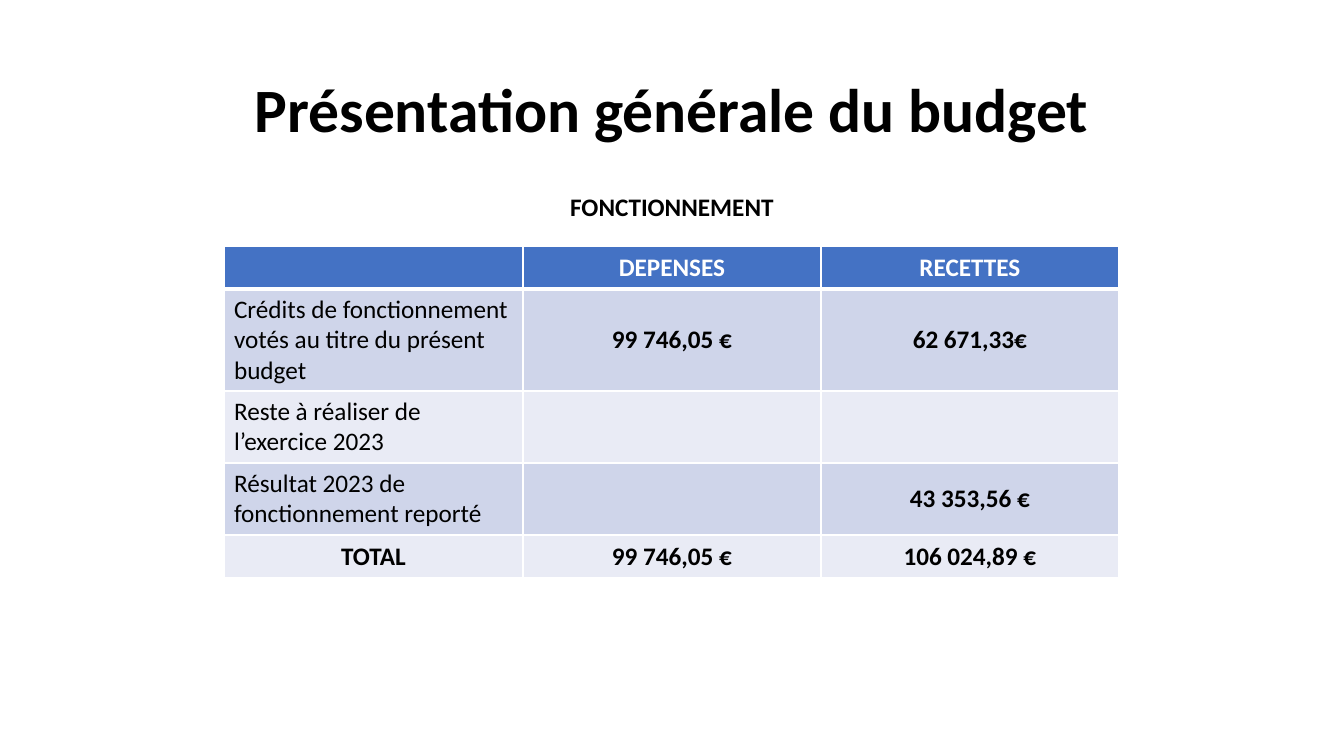
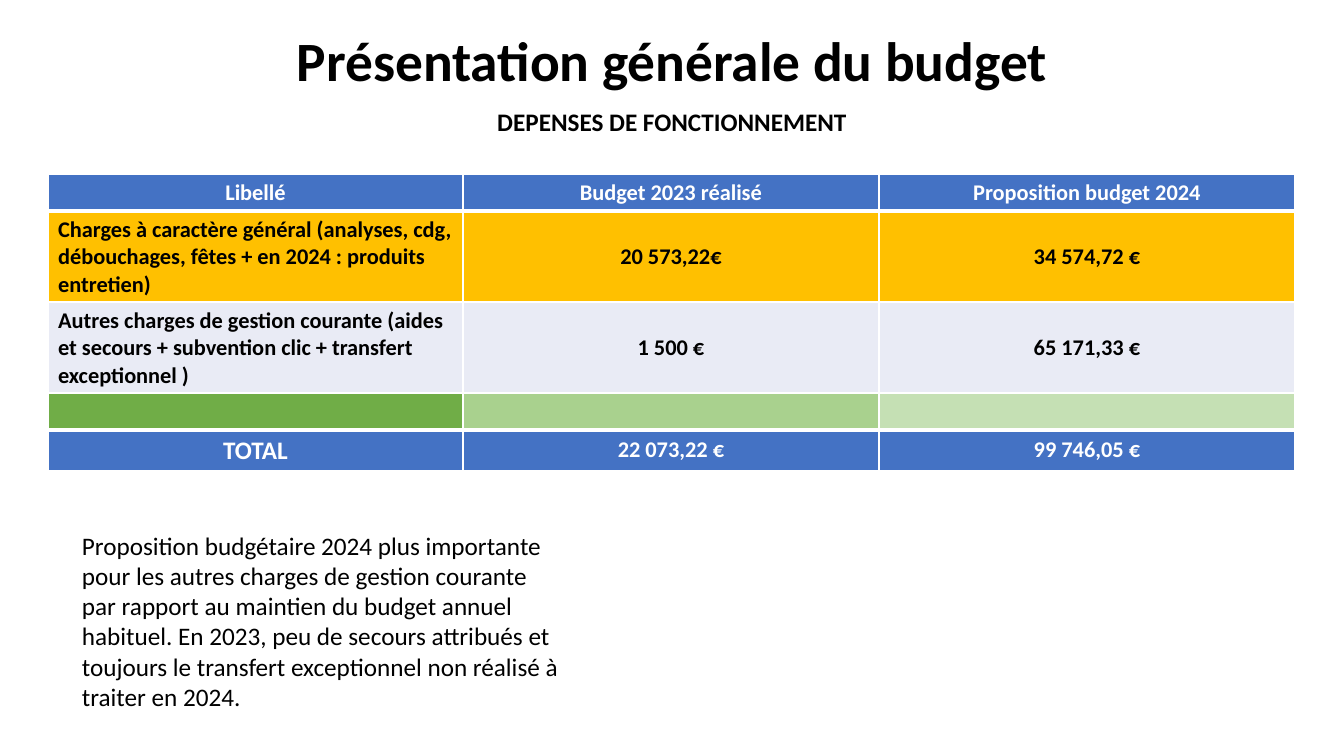
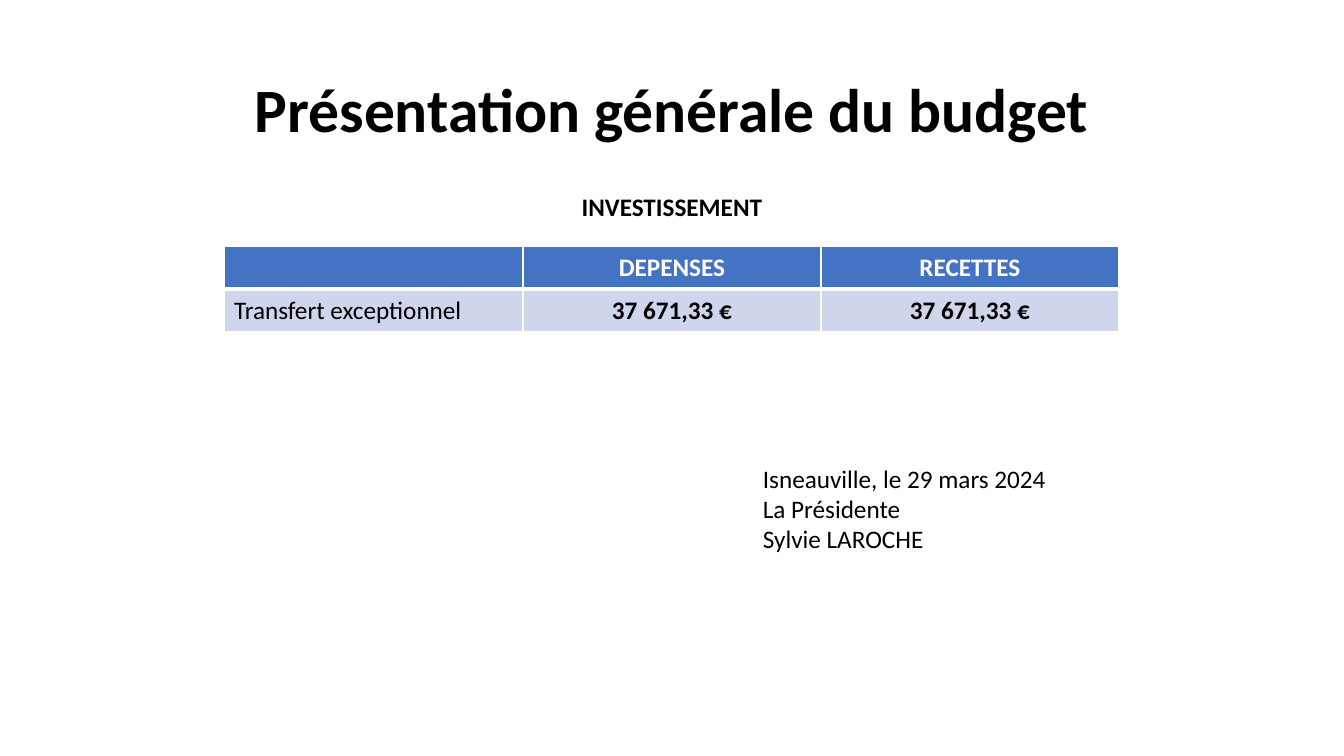
from lxml.etree import SubElement
from pptx import Presentation
from pptx.dml.color import RGBColor
from pptx.enum.text import MSO_ANCHOR as ANCHOR, MSO_AUTO_SIZE as AUTO, PP_ALIGN as ALIGN
from pptx.oxml.ns import qn
from pptx.util import Pt

PX = 914400 / 100.8
FONT = "Calibri"
TITLE = "Présentation générale du budget"
COLOURS = {
    "black": "000000", "white": "FFFFFF", "blue": "4472C4",
    "band": "CFD5EA", "pale": "E9EBF5", "gold": "FFC000",
    "green": "70AD47", "mid_green": "A9D18E", "light_green": "C5E0B4",
}


def write(paragraph, text, size=18, bold=False, colour="black", align=ALIGN.LEFT):
    paragraph.alignment = align
    run = paragraph.add_run()
    run.text = text
    run.font.name = FONT
    run.font.size = Pt(size)
    run.font.bold = bold
    run.font.color.rgb = RGBColor.from_string(COLOURS[colour])


def add_text(slide, box, lines, **style):
    frame = slide.shapes.add_textbox(*[round(n * PX) for n in box]).text_frame
    frame.word_wrap = True
    for i, line in enumerate(lines):
        write(frame.paragraphs[0] if i == 0 else frame.add_paragraph(), line, **style)


# Content: each table row is (height, fill or fills, cell texts)
SUMMARY = {
    "title_box": (92, 40, 1160, 146), "title_size": 44,
    "heading_box": (224, 186, 896, 40),
    "corner": (224, 246), "columns": (299, 298, 298),
    "size": 18, "bold_labels": False,
}
COLUMN_HEADS = (43, "blue", ("", "DEPENSES", "RECETTES"))

SLIDES = [
    SUMMARY | {
        "heading": "FONCTIONNEMENT",
        "rows": [
            COLUMN_HEADS,
            (102, "band", ("Crédits de fonctionnement votés au titre du présent budget",
                           "99 746,05 €", "62 671,33€")),
            (72, "pale", ("Reste à réaliser de l’exercice 2023", "", "")),
            (72, "band", ("Résultat 2023 de fonctionnement reporté", "", "43 353,56 €")),
            (43, "pale", ("TOTAL", "99 746,05 €", "106 024,89 €")),
        ],
    },
    {
        "title_box": (92, 40, 1160, 48), "title_size": 39.6,
        "heading_box": (297, 101, 750, 40), "heading": "DEPENSES DE FONCTIONNEMENT",
        "corner": (48, 174), "columns": (415, 416, 416),
        "size": 16, "bold_labels": True,
        "rows": [
            (37, "blue", ("Libellé", "Budget 2023 réalisé", "Proposition budget 2024")),
            (91, "gold", ("Charges à caractère général (analyses, cdg, débouchages, "
                          "fêtes + en 2024 : produits entretien)",
                          "20 573,22€", "34 574,72 €")),
            (91, "pale", ("Autres charges de gestion courante (aides et secours + "
                          "subvention clic + transfert exceptionnel )",
                          "1 500 €", "65 171,33 €")),
            (36, ("green", "mid_green", "light_green"), ("", "", "")),
            (40, "blue", ("TOTAL", "22 073,22 €", "99 746,05 €")),
        ],
        "note_box": (72, 525, 503, 194),
        "note": ["Proposition budgétaire 2024 plus importante pour les autres charges de "
                 "gestion courante par rapport au maintien du budget annuel habituel. "
                 "En 2023, peu de secours attribués et toujours le transfert exceptionnel "
                 "non réalisé à traiter en 2024."],
    },
    SUMMARY | {
        "heading": "INVESTISSEMENT",
        "rows": [
            COLUMN_HEADS,
            (43, "band", ("Transfert exceptionnel", "37 671,33 €", "37 671,33 €")),
        ],
        "note_box": (753, 458, 498, 102),
        "note": ["Isneauville, le 29 mars 2024", "La Présidente", "Sylvie LAROCHE"],
    },
]

deck = Presentation()
deck.slide_width, deck.slide_height = round(1344 * PX), round(756 * PX)

for content in SLIDES:
    slide = deck.slides.add_slide(deck.slide_layouts[5])

    # Title and heading
    title = slide.shapes.title
    title.left, title.top, title.width, title.height = [
        round(n * PX) for n in content["title_box"]]
    title.text_frame.auto_size = AUTO.NONE
    title.text_frame.vertical_anchor = ANCHOR.MIDDLE
    title.text_frame.paragraphs[0].line_spacing = 0.9
    write(title.text_frame.paragraphs[0], TITLE, content["title_size"], True,
          align=ALIGN.CENTER)
    add_text(slide, content["heading_box"], [content["heading"]],
             bold=True, align=ALIGN.CENTER)

    # Budget table
    rows, columns = content["rows"], content["columns"]
    area = (*content["corner"], sum(columns), sum(row[0] for row in rows))
    budget = slide.shapes.add_table(
        len(rows), len(columns), *[round(n * PX) for n in area]).table
    budget.horz_banding = False
    for c, width in enumerate(columns):
        budget.columns[c].width = round(width * PX)

    for r, (height, fills, texts) in enumerate(rows):
        budget.rows[r].height = round(height * PX)
        if isinstance(fills, str):
            fills = [fills] * len(columns)
        for c, (fill, text) in enumerate(zip(fills, texts)):
            cell = budget.cell(r, c)
            cell.vertical_anchor = ANCHOR.MIDDLE
            paragraph = cell.text_frame.paragraphs[0]
            is_total = text == "TOTAL"
            is_label = c == 0 and r > 0 and not is_total
            if text:
                write(paragraph, text, 18 if is_total else content["size"],
                      content["bold_labels"] or not is_label,
                      "white" if fill == "blue" else "black",
                      ALIGN.LEFT if is_label else ALIGN.CENTER)
            else:
                SubElement(paragraph._p, qn("a:endParaRPr"), sz=str(content["size"] * 100))

            # White rules, thicker between a blue row and its neighbour
            above = rows[r - 1][1] if r > 0 else None
            below = rows[r + 1][1] if r + 1 < len(rows) else None
            top = 3 if above and "blue" in (fill, above) else 1
            bottom = 3 if below and "blue" in (fill, below) else 1
            properties = cell._tc.get_or_add_tcPr()
            for edge, weight in zip("LRTB", (1, 1, top, bottom)):
                rule = SubElement(properties, qn(f"a:ln{edge}"), w=str(Pt(weight)))
                paint = SubElement(rule, qn("a:solidFill"))
                SubElement(paint, qn("a:srgbClr"), val=COLOURS["white"])
            cell.fill.solid()
            cell.fill.fore_color.rgb = RGBColor.from_string(COLOURS[fill])

    # Note below the table
    if "note" in content:
        add_text(slide, content["note_box"], content["note"])

deck.save("out.pptx")
